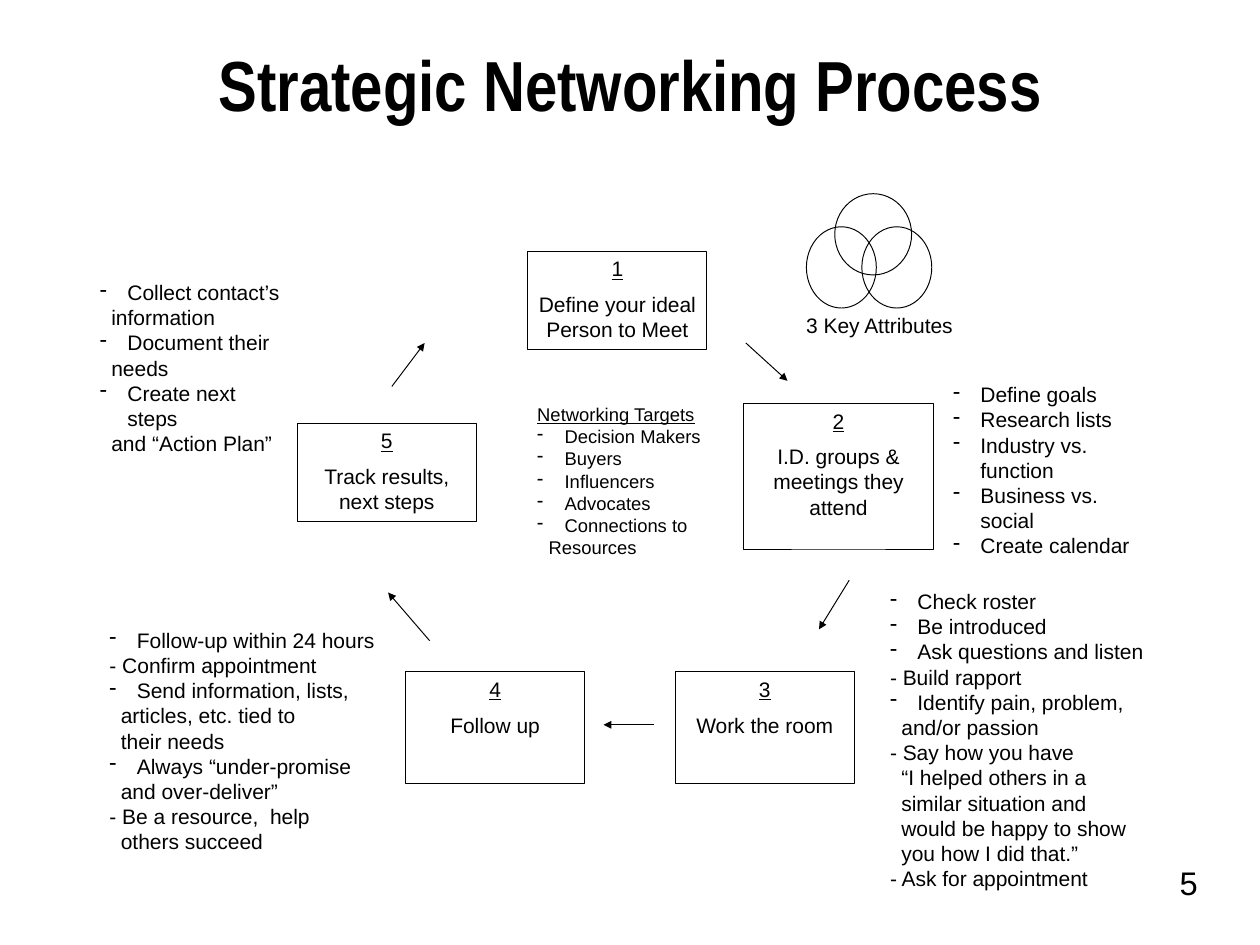
import pptx
import pptx.util
from pptx.dml.color import RGBColor
from pptx.enum.shapes import MSO_CONNECTOR, MSO_SHAPE
from pptx.enum.text import MSO_ANCHOR, MSO_AUTO_SIZE, PP_ALIGN
from pptx.oxml.ns import qn
from lxml import etree

COLORS = {"ink": "000000", "paper": "FFFFFF"}

# First character of a list line -> (left margin, first-line indent) in inches
LIST_LEVELS = {"*": (0.29, -0.29), ">": (0.12, 0)}


def write(tf, lines, size=16, font="Arial", bold=False, align=PP_ALIGN.LEFT,
          anchor=MSO_ANCHOR.TOP, wrap=True, underline_first=False, gap=0):
    """Fill a frame; a line starting with * is bulleted, with > is indented."""
    tf.auto_size = MSO_AUTO_SIZE.NONE
    tf.word_wrap = wrap
    tf.vertical_anchor = anchor
    for i, line in enumerate(lines):
        p = tf.paragraphs[0] if i == 0 else tf.add_paragraph()
        p.alignment = align
        p.space_before = pptx.util.Pt(gap if i else 0)
        mark = line[0]
        if mark in LIST_LEVELS:
            line = line[1:].strip()
            pPr = p._p.get_or_add_pPr()
            for key, inches in zip(("marL", "indent"), LIST_LEVELS[mark]):
                pPr.set(key, str(int(pptx.util.Inches(inches))))
            if mark == "*":
                etree.SubElement(pPr, qn("a:buChar")).set("char", "-")
        r = p.add_run()
        r.text = line
        r.font.name = font
        r.font.size = pptx.util.Pt(size)
        r.font.bold = bold
        r.font.underline = underline_first and i == 0
        r.font.color.rgb = RGBColor.from_string(COLORS["ink"])


class Diagram:
    """Draws on one slide; lengths are percentages of its width and height."""

    def __init__(self, prs):
        self.width, self.height = prs.slide_width, prs.slide_height
        self.line_width = pptx.util.Pt(0.75)
        self.s = prs.slides.add_slide(prs.slide_layouts[5])
        fill = self.s.background.fill
        fill.solid()
        fill.fore_color.rgb = RGBColor.from_string(COLORS["paper"])

    def scale(self, *lengths):
        """Turn alternating x and y percentages into EMU."""
        return [int((self.height if i % 2 else self.width) * n / 100)
                for i, n in enumerate(lengths)]

    def outline(self, line):
        line.color.rgb = RGBColor.from_string(COLORS["ink"])
        line.width = self.line_width

    def title(self, text, *place):
        sp = self.s.shapes.title
        sp.left, sp.top, sp.width, sp.height = self.scale(*place)
        write(sp.text_frame, [text], size=54, font="Arial Narrow", bold=True,
              align=PP_ALIGN.CENTER, anchor=MSO_ANCHOR.MIDDLE)

    def text(self, lines, *place, **style):
        sp = self.s.shapes.add_textbox(*self.scale(*place))
        write(sp.text_frame, lines, **style)

    def shape(self, kind, *place):
        sp = self.s.shapes.add_shape(kind, *self.scale(*place))
        sp.shadow.inherit = False
        sp.fill.background()
        self.outline(sp.line)
        return sp

    def step(self, number, label, *place):
        sp = self.shape(MSO_SHAPE.RECTANGLE, *place)
        write(sp.text_frame, [str(number), label], align=PP_ALIGN.CENTER,
              underline_first=True, gap=8)

    def circle(self, *place):
        self.shape(MSO_SHAPE.OVAL, *place)

    def arrow(self, *ends):
        sp = self.s.shapes.add_connector(MSO_CONNECTOR.STRAIGHT,
                                         *self.scale(*ends))
        self.outline(sp.line)
        tail = etree.SubElement(sp.line._get_or_add_ln(), qn("a:tailEnd"))
        tail.set("type", "triangle")
        etree.SubElement(sp._element.spPr, qn("a:effectLst"))


STEPS = [
    ("Define your ideal Person to Meet", 41.9, 26.6, 14.2, 10.4),
    ("I.D. groups & meetings they attend", 59, 42.7, 15.1, 15.4),
    ("Work the room", 53.6, 71.1, 14.2, 11.8),
    ("Follow up", 32.2, 71.1, 14.2, 11.8),
    ("Track results, next steps", 23.6, 44.8, 14.2, 10.4),
]

ARROWS = [
    (59.2, 36.3, 62.5, 40.3),
    (67.4, 61.4, 65, 66.6),
    (51.9, 76.7, 47.9, 76.7),
    (34.1, 67.8, 30.8, 62.7),
    (31.1, 40.9, 33.7, 36.3),
]

ATTRIBUTE_CIRCLES = [
    (64, 24, 5.55, 8.6),
    (66.25, 20.5, 6.1, 8.6),
    (68.4, 24, 5.55, 8.6),
]

GROUP_NOTES = ["* Define goals", "* Research lists", "* Industry vs. function",
               "* Business vs. social", "* Create calendar"]

ROOM_NOTES = ["* Check roster", "* Be introduced", "* Ask questions and listen",
              "- Build rapport", "* Identify pain, problem,",
              "> and/or passion", "- Say how you have",
              "> “I helped others in a", "> similar situation and",
              "> would be happy to show", "> you how I did that.”",
              "- Ask for appointment"]

FOLLOW_UP_NOTES = ["* Follow-up within 24 hours", "- Confirm appointment",
                   "* Send information, lists,", "> articles, etc. tied to",
                   "> their needs", "* Always “under-promise",
                   "> and over-deliver”", "- Be a resource,  help",
                   "> others succeed"]

TRACKING_NOTES = ["* Collect contact’s", "> information",
                  "* Document their", "> needs", "* Create next steps",
                  "> and “Action Plan”"]

TARGETS = ["Networking Targets", "* Decision Makers", "* Buyers",
           "* Influencers", "* Advocates", "* Connections to", "> Resources"]


def main():
    prs = pptx.Presentation()
    prs.slide_width = pptx.util.Inches(13.33)
    prs.slide_height = pptx.util.Inches(10)
    d = Diagram(prs)
    d.title("Strategic Networking Process", 4.5, 1.1, 91.1, 15.4)
    for number, (label, *place) in enumerate(STEPS, 1):
        d.step(number, label, *place)
    for ends in ARROWS:
        d.arrow(*ends)
    for place in ATTRIBUTE_CIRCLES:
        d.circle(*place)
    d.text(["3 Key Attributes"], 63.15, 32.6, 13.3, 3.7,
           align=PP_ALIGN.CENTER, wrap=False)
    d.text(GROUP_NOTES, 74.9, 39.9, 17.55, 14.5)
    d.text(ROOM_NOTES, 69.9, 61.8, 22.5, 33.3)
    d.text(FOLLOW_UP_NOTES, 7.95, 65.9, 23.4, 25.2)
    d.text(TRACKING_NOTES, 7.2, 29.1, 16.35, 17.2)
    d.text(TARGETS, 41.9, 42.2, 15.4, 17.5, size=14, underline_first=True)
    d.text(["5"], 71.3, 90.8, 24.5, 6.3, size=24.9, align=PP_ALIGN.RIGHT)
    prs.save("out.pptx")


if __name__ == "__main__":
    main()
